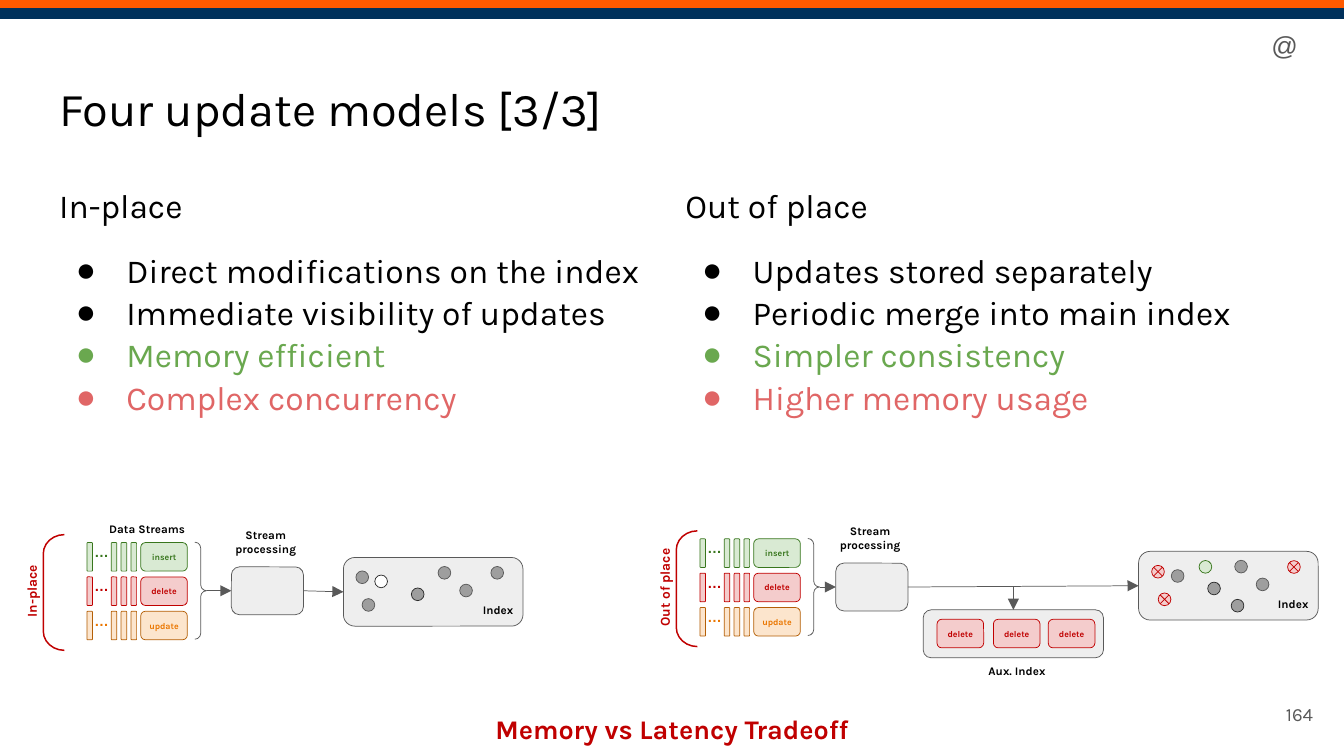
from pptx import Presentation
from pptx.dml.color import RGBColor
from pptx.enum.shapes import MSO_CONNECTOR, MSO_SHAPE
from pptx.enum.text import MSO_ANCHOR, MSO_AUTO_SIZE, PP_ALIGN
from pptx.oxml.ns import qn
from pptx.util import Pt
from lxml import etree

RECT, ROUND, OVAL = MSO_SHAPE.RECTANGLE, MSO_SHAPE.ROUNDED_RECTANGLE, MSO_SHAPE.OVAL
CROSSED = MSO_SHAPE.FLOWCHART_SUMMING_JUNCTION
BRACKET, BRACE = MSO_SHAPE.LEFT_BRACKET, MSO_SHAPE.RIGHT_BRACE
STRAIGHT = MSO_CONNECTOR.STRAIGHT
TOP, MIDDLE = MSO_ANCHOR.TOP, MSO_ANCHOR.MIDDLE
LEFT, CENTER, RIGHT = PP_ALIGN.LEFT, PP_ALIGN.CENTER, PP_ALIGN.RIGHT

COLORS = {
    "black": "000000", "white": "FFFFFF", "orange": "FF5A00", "navy": "00315B",
    "gray": "595959", "dark": "2C2C2C", "dot": "9E9E9E", "panel": "EEEEEE",
    "pro": "6AA84F", "con": "E06666", "red": "C00000",
    "green": "38761D", "light green": "D9EAD3", "light red": "F4CCCC",
    "brown": "B45F06", "light orange": "FCE5CD", "update": "EA7600",
}

# Content
TITLE = "Four update models [3/3]"
COLUMNS = [
    (24.5, 671, "In-place", [
        ("Direct modifications on the index", "black"),
        ("Immediate visibility of updates", "black"),
        ("Memory efficient", "pro"),
        ("Complex concurrency", "con")]),
    (360, 335.5, "Out of place", [
        ("Updates stored separately", "black"),
        ("Periodic merge into main index", "black"),
        ("Simpler consistency", "pro"),
        ("Higher memory usage", "con")]),
]
STREAMS = [  # label, fill, line, text
    ("insert", "light green", "green", "green"),
    ("delete", "light red", "red", "red"),
    ("update", "light orange", "brown", "update"),
]
DOT_STYLES = {  # shape, fill, line
    "plain": (OVAL, "dot", "gray"), "dark": (OVAL, "dot", "dark"),
    "empty": (OVAL, "white", "dark"), "new": (OVAL, "light green", "green"),
    "deleted": (CROSSED, "light red", "red"),
}
IN_PLACE_DOTS = [
    (6.7, 7.2, "plain"), (50.7, 4.8, "plain"), (79, 4.8, "plain"), (62.3, 14.3, "plain"),
    (10, 22, "plain"), (16.8, 9.4, "empty"), (36.4, 16.3, "dark")]
OUT_OF_PLACE_DOTS = [
    (7, 7.5, "deleted"), (51.5, 4.8, "plain"), (79.8, 5, "deleted"), (63, 14.3, "plain"),
    (10.5, 22.3, "deleted"), (17.5, 9.8, "plain"), (37, 16.5, "dark"), (49.6, 25.7, "dark"),
    (32.4, 4.9, "new")]

prs = Presentation()
prs.slide_width, prs.slide_height = Pt(720), Pt(405)
s = prs.slides.add_slide(prs.slide_layouts[3])


def rgb(name):
    return RGBColor.from_string(COLORS[name])


def write(p, text, size, color="black", bold=False, font="Karla", align=LEFT):
    p.alignment = align
    r = p.add_run()
    r.text = text
    r.font.size, r.font.name, r.font.bold = Pt(size), font, bold
    r.font.color.rgb = rgb(color)


def frame(sp, inset, anchor=TOP):
    tf = sp.text_frame
    tf.word_wrap, tf.auto_size, tf.vertical_anchor = True, MSO_AUTO_SIZE.NONE, anchor
    tf.margin_left = tf.margin_right = tf.margin_top = tf.margin_bottom = Pt(inset)
    return tf


def place(sp, x, y, w, h):
    sp.left, sp.top, sp.width, sp.height = Pt(x), Pt(y), Pt(w), Pt(h)


def label(text, x, y, w, h, size=6.2, inset=3.6, anchor=TOP, **style):
    sp = s.shapes.add_textbox(Pt(x), Pt(y), Pt(w), Pt(h))
    write(frame(sp, inset, anchor).paragraphs[0], text, size, **style)
    return sp


def shape(kind, x, y, w, h, fill=None, line=None, weight=0.39):
    sp = s.shapes.add_shape(kind, Pt(x), Pt(y), Pt(w), Pt(h))
    sp.shadow.inherit = False
    if fill:
        sp.fill.solid()
        sp.fill.fore_color.rgb = rgb(fill)
    else:
        sp.fill.background()
    if line:
        sp.line.color.rgb = rgb(line)
        sp.line.width = Pt(weight)
    else:
        sp.line.fill.background()
    return sp


def event_box(x, y, text, fill, line, color):
    sp = shape(ROUND, x, y, 25, 15.3, fill, line)
    write(frame(sp, 3.6, MIDDLE).paragraphs[0], text, 4.7, color, True, align=CENTER)


def arrow(x, y, target, side, source=None):
    """Arrow from (x, y), or from the right side of source, to a side of target."""
    c = s.shapes.add_connector(STRAIGHT, Pt(x), Pt(y), Pt(x), Pt(y))
    if source is not None:
        c.begin_connect(source, 3)
    c.end_connect(target, side)
    c.line.color.rgb = rgb("gray")
    c.line.width = Pt(0.39)
    etree.SubElement(c.line._get_or_add_ln(), qn("a:tailEnd"), type="triangle")
    etree.SubElement(c._element.spPr, qn("a:effectLst"))


def pipeline(name, x, y, bracket_x, process_x):
    """Side label, three streams, brace and processing box, which is returned."""
    sp = label(name, bracket_x - 42.3, y + 17, 72, 18, 7.3, anchor=MIDDLE,
               color="red", bold=True, align=CENTER)
    sp.rotation = 270
    sp = shape(BRACKET, bracket_x, y - 4.3, 11.3, 62, line="red", weight=0.78)
    sp.adjustments[0] = 0.906
    for i, (text, fill, line, color) in enumerate(STREAMS):
        row = y + i * 18.4
        for dx in (0, 13, 18.3, 23.6):
            shape(ROUND, x + dx, row, 3, 15.3, fill, line)
        label("…", x + 0.4, row - 3.2, 18.5, 17, 7.7, color=color, bold=True, font="Arial")
        event_box(x + 28.8, row, text, fill, line, color)
    sp = shape(BRACE, x + 57.8, y - 0.2, 6.3, 52, line="gray")
    sp.adjustments[0] = 0.5
    process = shape(ROUND, process_x, y + 13, 38.6, 25.6, "panel", "gray")
    arrow(x + 64.1, y + 25.8, process, 1)
    label("Stream processing", process_x - 11, y - 11.4, 58.8, 30, bold=True, align=CENTER)
    return process


def index_box(x, y, dots, process):
    box = shape(ROUND, x, y, 96.2, 36.8, "panel", "gray")
    for dx, dy, style in dots:
        kind, fill, line = DOT_STYLES[style]
        shape(kind, x + dx, y + dy, 6.8, 6.8, fill, line)
    label("Index", x + 65.5, y + 21, 34.6, 15, bold=True, align=CENTER)
    arrow(x, y, box, 1, process)


# Header bands and corner mark
shape(RECT, 0, 0, 720, 4.3, "orange")
shape(RECT, 0, 4.3, 720, 5.8, "navy")
label("@", 674, 8.6, 27.4, 31.7, 14, 7.2, color="gray", font="Arial")

# Title and two bulleted columns
place(s.shapes.title, 24.5, 35.3, 671, 45.4)
write(frame(s.shapes.title, 7.2).paragraphs[0], TITLE, 25.2)
for sp, (x, w, heading, bullets) in zip(list(s.placeholders)[1:], COLUMNS):
    place(sp, x, 90.7, w, 139)
    tf = frame(sp, 7.2)
    for i, (text, color) in enumerate([(heading, "black")] + bullets):
        p = tf.add_paragraph() if i else tf.paragraphs[0]
        pPr = p._p.get_or_add_pPr()
        pPr.set("marL", str(Pt(36) if i else 0))
        pPr.set("indent", str(Pt(-27) if i else 0))
        if i:
            bu = etree.SubElement(pPr, qn("a:buClr"))
            etree.SubElement(bu, qn("a:srgbClr"), val=COLORS[color])
            etree.SubElement(pPr, qn("a:buChar"), char="●")
        else:
            etree.SubElement(pPr, qn("a:buNone"))
        p.line_spacing, p.space_before = 1.05, Pt(12 if i == 1 else 0)
        write(p, text, 18, color)

# In-place diagram
process = pipeline("In-place", 46.6, 290.7, 23.2, 124)
label("Data Streams", 54, 275.8, 49.7, 15, bold=True, align=CENTER)
index_box(184, 298.7, IN_PLACE_DOTS, process)

# Out of place diagram with its auxiliary index
process = pipeline("Out of place", 375, 288.7, 362.3, 447.8)
index_box(610, 295.4, OUT_OF_PLACE_DOTS, process)
aux = shape(ROUND, 494.6, 326.7, 96.6, 25.7, "panel", "gray")
arrow(542.9, 314, aux, 0)
for x in (502, 532.2, 561.6):
    event_box(x, 331.8, *STREAMS[1])
label("Aux. Index", 507, 352.3, 75.6, 15, bold=True, align=CENTER)

# Takeaway and page number
label("Memory vs Latency Tradeoff", 24.5, 374.4, 671, 30.6, 14.4, 7.2,
      color="red", bold=True, align=CENTER)
label("164", 667.4, 367.2, 43.2, 31, 10, 7.2, MIDDLE, color="gray", align=RIGHT)

prs.save("out.pptx")
